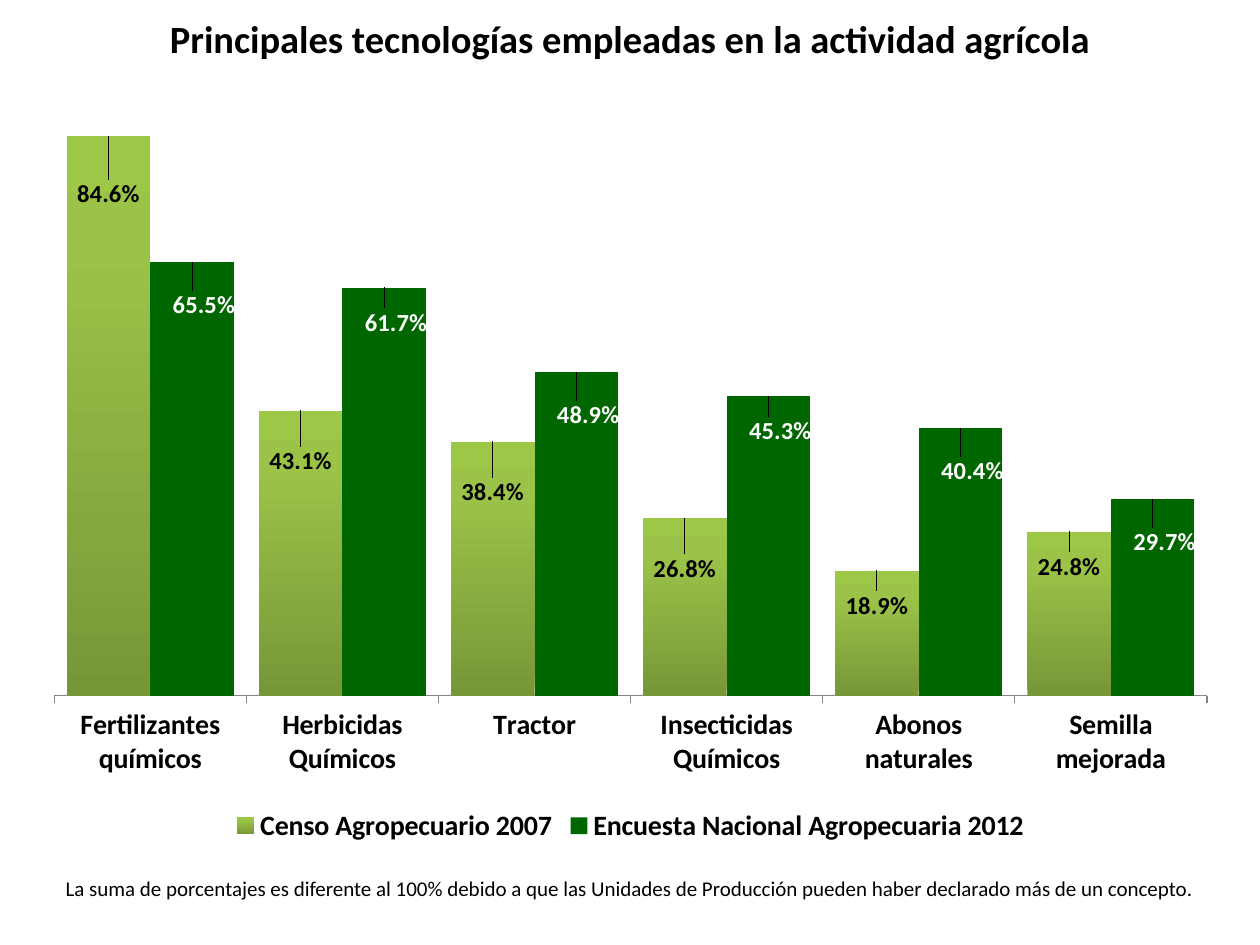
from copy import deepcopy
from dataclasses import dataclass

from lxml import etree
from pptx import Presentation
from pptx.chart.data import CategoryChartData
from pptx.dml.color import RGBColor
from pptx.enum.chart import XL_CHART_TYPE, XL_LABEL_POSITION, XL_LEGEND_POSITION, XL_TICK_MARK
from pptx.enum.shapes import MSO_SHAPE
from pptx.enum.text import MSO_ANCHOR, PP_ALIGN
from pptx.oxml.ns import qn
from pptx.util import Inches, Pt

COLUMNS = XL_CHART_TYPE.COLUMN_CLUSTERED
INSIDE_END = XL_LABEL_POSITION.INSIDE_END
LEGEND_BOTTOM = XL_LEGEND_POSITION.BOTTOM
TICK_OUTSIDE = XL_TICK_MARK.OUTSIDE
RECTANGLE = MSO_SHAPE.RECTANGLE
MIDDLE = MSO_ANCHOR.MIDDLE
CENTER = PP_ALIGN.CENTER
TITLE_ONLY = 5

CATEGORIES = ["Fertilizantes químicos", "Herbicidas Químicos", "Tractor",
              "Insecticidas Químicos", "Abonos naturales", "Semilla mejorada"]
CENSUS = [0.846, 0.431, 0.384, 0.268, 0.189, 0.248]
SURVEY = [0.655, 0.617, 0.489, 0.453, 0.404, 0.297]


@dataclass(frozen=True)
class Theme:
    font: str = "Calibri"
    text: str = "000000"
    light: str = "FFFFFF"
    axis: str = "868686"
    survey: str = "006600"
    census: tuple = ((0, "779737"), (0.8, "9BC348"), (1, "9DC746"))
    title_size: int = 22
    axis_size: int = 16
    label_size: int = 14
    note_size: int = 12
    chart_size: int = 10


def set_attributes(target, values):
    for name, value in values.items():
        setattr(target, name, value)


def add_layout(parent, index, **values):
    for old in parent.findall(qn("c:layout")):
        parent.remove(old)
    layout = etree.Element(qn("c:layout"))
    manual = etree.SubElement(layout, qn("c:manualLayout"))
    for name, value in values.items():
        etree.SubElement(manual, qn(f"c:{name}")).set("val", str(value))
    parent.insert(index, layout)


class SlideBuilder:
    """Hold the theme and the current slide, and add each kind of element."""

    def __init__(self, presentation, theme):
        self.width = presentation.slide_width
        self.height = presentation.slide_height
        self.theme = theme
        self.slide = presentation.slides.add_slide(presentation.slide_layouts[TITLE_ONLY])

    def box(self, left, top, width, height):
        return {"left": round(left * self.width), "top": round(top * self.height),
                "width": round(width * self.width), "height": round(height * self.height)}

    def format_font(self, font, size, color, bold=False):
        set_attributes(font, {"name": self.theme.font, "size": Pt(size), "bold": bold})
        font.color.rgb = RGBColor.from_string(color)

    def fill_solid(self, fill, color):
        fill.solid()
        fill.fore_color.rgb = RGBColor.from_string(color)

    def set_text(self, shape, text, size, bold=False):
        frame = shape.text_frame
        set_attributes(frame, {"text": text, "word_wrap": True, "vertical_anchor": MIDDLE})
        paragraph = frame.paragraphs[0]
        paragraph.alignment = CENTER
        self.format_font(paragraph.font, size, self.theme.text, bold)

    def title(self, text, *shares):
        shape = self.slide.shapes.title
        set_attributes(shape, self.box(*shares))
        self.set_text(shape, text, self.theme.title_size, bold=True)

    def note(self, text, *shares):
        shape = self.slide.shapes.add_shape(RECTANGLE, *self.box(*shares).values())
        shape.shadow.inherit = False
        self.fill_solid(shape.fill, self.theme.light)
        shape.line.fill.background()
        self.set_text(shape, text, self.theme.note_size)

    def column_chart(self, categories, series, *shares):
        data = CategoryChartData(number_format="0.0%")
        data.categories = categories
        for name, values in series.items():
            data.add_series(name, values)
        frame = self.slide.shapes.add_chart(COLUMNS, *self.box(*shares).values(), data)
        chart = frame.chart
        set_attributes(chart, {"has_title": False, "has_legend": True})
        self.format_font(chart.font, self.theme.chart_size, self.theme.text)
        set_attributes(chart.legend, {"position": LEGEND_BOTTOM, "include_in_layout": False})
        set_attributes(chart.plots[0], {"gap_width": 30, "overlap": 0, "vary_by_categories": False})
        set_attributes(chart.value_axis, {"minimum_scale": 0, "maximum_scale": 0.9,
                                          "has_major_gridlines": False, "visible": False})
        chart.category_axis.major_tick_mark = TICK_OUTSIDE
        chart.category_axis.format.line.color.rgb = RGBColor.from_string(self.theme.axis)
        for font in (chart.legend.font, chart.category_axis.tick_labels.font):
            self.format_font(font, self.theme.axis_size, self.theme.text, bold=True)
        plot_area = chart.plots[0]._element.getparent()
        add_layout(plot_area, 0, layoutTarget="inner", xMode="edge", yMode="edge",
                   x=0.02, y=0.02, w=0.96, h=0.78)
        return chart

    def gradient_series(self, series, stops):
        fill = series.format.fill
        fill.gradient()
        fill.gradient_angle = 90
        stop_list = series._element.find(".//" + qn("a:gsLst"))
        stop_list.append(deepcopy(stop_list[-1]))
        for stop, (position, color) in zip(fill.gradient_stops, stops):
            stop.position = position
            stop.color.rgb = RGBColor.from_string(color)

    def series_labels(self, series, color, shift_right, shifts_down):
        labels = series.data_labels
        set_attributes(labels, {"show_value": True, "position": INSIDE_END,
                                "number_format": "0.0%", "number_format_is_linked": False})
        self.format_font(labels.font, self.theme.label_size, color, bold=True)
        for index in range(len(shifts_down)):
            label = series.points[index].data_label
            self.format_font(label.font, self.theme.label_size, color, bold=True)
            label.position = INSIDE_END
        for element, shift in zip(series._element.findall(".//" + qn("c:dLbl")), shifts_down):
            add_layout(element, 1, x=shift_right, y=shift)


def main():
    presentation = Presentation()
    presentation.slide_width, presentation.slide_height = Inches(10), Inches(7.5)
    theme = Theme()
    builder = SlideBuilder(presentation, theme)
    builder.title("Principales tecnologías empleadas en la actividad agrícola", 0, 0.01, 1, 0.06)
    builder.note("La suma de porcentajes es diferente al 100% debido a que las Unidades de "
                 "Producción pueden haber declarado más de un concepto.",
                 0.02, 0.92, 0.96, 0.04)
    chart = builder.column_chart(
        CATEGORIES,
        {"Censo Agropecuario 2007": CENSUS, "Encuesta Nacional Agropecuaria 2012": SURVEY},
        0.024, 0.09, 0.953, 0.808)
    census, survey = chart.plots[0].series
    builder.gradient_series(census, theme.census)
    builder.fill_solid(survey.format.fill, theme.survey)
    builder.series_labels(census, theme.text, 0, [0.05, 0.04, 0.04, 0.04, 0.02, 0.02])
    builder.series_labels(survey, theme.light, 0.01, [0.03, 0.02, 0.03, 0.02, 0.03, 0.03])
    presentation.save("out.pptx")


if __name__ == "__main__":
    main()
